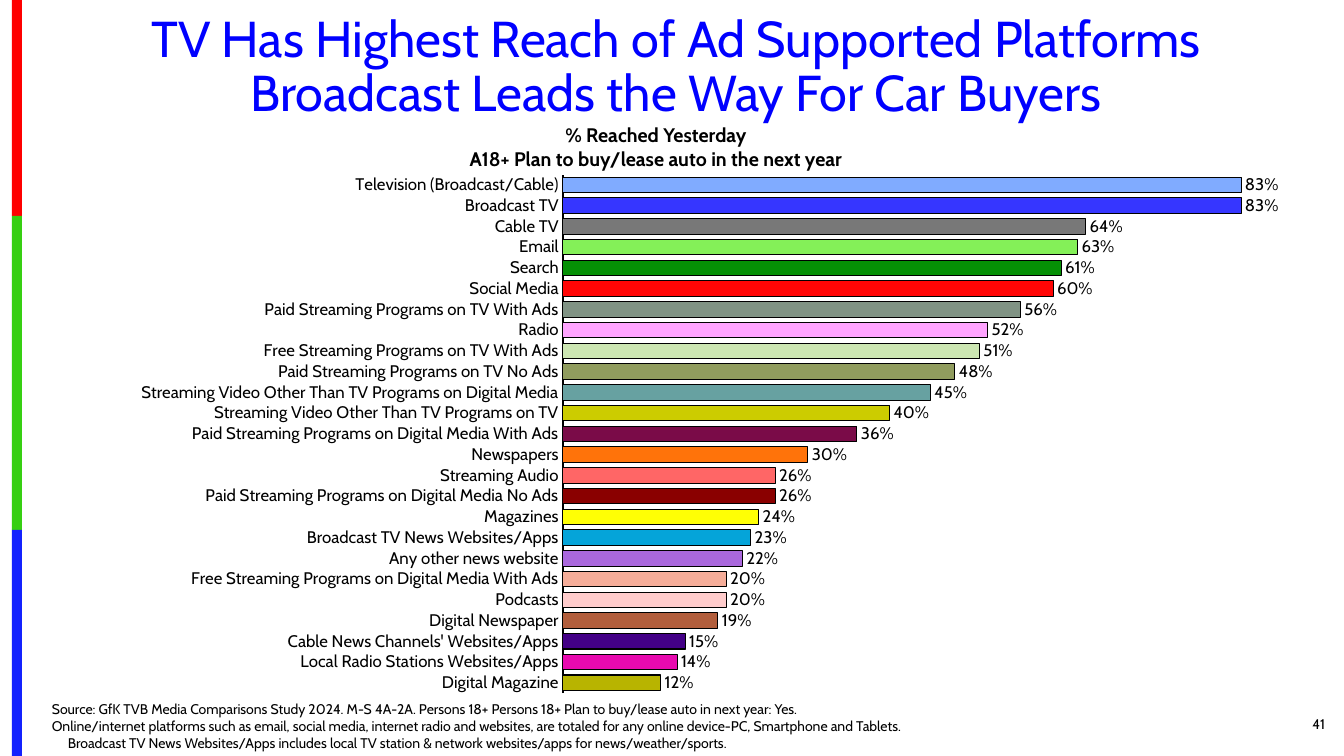
from dataclasses import dataclass

from lxml import etree
from pptx import Presentation
from pptx import util as u
from pptx.chart.data import CategoryChartData
from pptx.dml.color import RGBColor
from pptx.enum import chart as charts, shapes, text
from pptx.oxml import ns

EMU_PER_PX = 914400 / 100.8


@dataclass(frozen=True)
class Theme:
    font: str = "Cabin"
    ink: str = "000000"
    title_blue: str = "0000FF"
    title_size: int = 36
    subtitle_size: int = 14
    label_size: int = 12
    note_size: int = 10
    stripe_colors: tuple = ("FE0000", "36CF12", "1322FE")


THEME = Theme()
STRIPE_EDGES = (0, 216, 530, 756)
PLATFORMS = [
    ("Television (Broadcast/Cable)", 0.83, "80ABFF"),
    ("Broadcast TV", 0.83, "3636FF"),
    ("Cable TV", 0.64, "787878"),
    ("Email", 0.63, "84F058"),
    ("Search", 0.61, "059005"),
    ("Social Media", 0.60, "FF0505"),
    ("Paid Streaming Programs on TV With Ads", 0.56, "809384"),
    ("Radio", 0.52, "FFA4FF"),
    ("Free Streaming Programs on TV With Ads", 0.51, "CCE6B2"),
    ("Paid Streaming Programs on TV No Ads", 0.48, "909C5E"),
    ("Streaming Video Other Than TV Programs on Digital Media", 0.45, "67A1A1"),
    ("Streaming Video Other Than TV Programs on TV", 0.40, "CCCC00"),
    ("Paid Streaming Programs on Digital Media With Ads", 0.36, "7A0B48"),
    ("Newspapers", 0.30, "FF730A"),
    ("Streaming Audio", 0.26, "FF6666"),
    ("Paid Streaming Programs on Digital Media No Ads", 0.26, "8A0000"),
    ("Magazines", 0.24, "FFFF05"),
    ("Broadcast TV News Websites/Apps", 0.23, "05A4D9"),
    ("Any other news website", 0.22, "AA68DD"),
    ("Free Streaming Programs on Digital Media With Ads", 0.20, "F5AD99"),
    ("Podcasts", 0.20, "FFCCCC"),
    ("Digital Newspaper", 0.19, "B25E3C"),
    ("Cable News Channels' Websites/Apps", 0.15, "430086"),
    ("Local Radio Stations Websites/Apps", 0.14, "E80AAF"),
    ("Digital Magazine", 0.12, "B8B400"),
]
SOURCE_NOTES = [
    "Source: GfK TVB Media Comparisons Study 2024. M-S 4A-2A. Persons 18+ Persons 18+ Plan to buy/lease auto in next year: Yes.",
    "Online/internet platforms such as email, social media, internet radio and websites, are totaled for any online device-PC, Smartphone and Tablets.",
    "Broadcast TV News Websites/Apps includes local TV station & network websites/apps for news/weather/sports.",
]


def px(length):
    return u.Emu(round(length * EMU_PER_PX))


def style_font(font, size, color=THEME.ink, bold=False):
    font.name = THEME.font
    font.size = u.Pt(size)
    font.bold = bold
    font.color.rgb = RGBColor.from_string(color)


def add_text(slide, lines, box, size, color=THEME.ink, bold=False, align="LEFT",
             anchor="TOP", line_spacing=None, indents=None):
    frame = slide.shapes.add_textbox(*map(px, box)).text_frame
    frame.word_wrap = True
    frame.vertical_anchor = text.MSO_ANCHOR[anchor]
    for index, line in enumerate(lines):
        paragraph = frame.add_paragraph() if index else frame.paragraphs[0]
        if indents and indents[index]:
            paragraph._p.get_or_add_pPr().set("marL", str(px(indents[index])))
        paragraph.alignment = text.PP_ALIGN[align]
        paragraph.line_spacing = line_spacing
        run = paragraph.add_run()
        run.text = line
        style_font(run.font, size, color, bold)


def add_stripe(slide, top, bottom, color):
    stripe = slide.shapes.add_shape(
        shapes.MSO_SHAPE.RECTANGLE, px(12), px(top), px(10), px(bottom - top))
    stripe.shadow.inherit = False
    stripe.fill.solid()
    stripe.fill.fore_color.rgb = RGBColor.from_string(color)
    stripe.line.fill.background()


def place_plot(chart, x, y, w, h):
    area = chart._chartSpace.chart.plotArea
    for old_layout in area.findall(ns.qn("c:layout")):
        area.remove(old_layout)
    layout = etree.Element(ns.qn("c:layout"))
    manual = etree.SubElement(layout, ns.qn("c:manualLayout"))
    settings = dict(layoutTarget="inner", xMode="edge", yMode="edge", x=x, y=y, w=w, h=h)
    for name, value in settings.items():
        etree.SubElement(manual, ns.qn(f"c:{name}")).set("val", str(value))
    area.insert(0, layout)


def style_line(line, width):
    line.color.rgb = RGBColor.from_string(THEME.ink)
    line.width = u.Pt(width)


def add_reach_chart(slide, box):
    names, values, colors = zip(*PLATFORMS)
    data = CategoryChartData(number_format="0%")
    data.categories = names
    data.add_series("Series 1", values)
    chart = slide.shapes.add_chart(
        charts.XL_CHART_TYPE.BAR_CLUSTERED, *map(px, box), data).chart
    chart.has_title = False
    chart.has_legend = False
    style_font(chart.font, THEME.note_size)
    place_plot(chart, 0.413, 0.029, 0.565, 0.964)

    category_axis = chart.category_axis
    category_axis.reverse_order = True
    category_axis.has_major_gridlines = False
    category_axis.major_tick_mark = charts.XL_TICK_MARK.NONE
    category_axis.minor_tick_mark = charts.XL_TICK_MARK.NONE
    style_font(category_axis.tick_labels.font, THEME.label_size)
    style_line(category_axis.format.line, 1.5)

    value_axis = chart.value_axis
    value_axis.minimum_scale = 0
    value_axis.maximum_scale = 0.9
    value_axis.has_major_gridlines = False
    value_axis.visible = False

    plot = chart.plots[0]
    plot.gap_width = 34
    plot.vary_by_categories = False
    plot.has_data_labels = True
    labels = plot.data_labels
    labels.show_value = True
    labels.number_format = "0%"
    labels.number_format_is_linked = False
    labels.position = charts.XL_LABEL_POSITION.OUTSIDE_END
    style_font(labels.font, THEME.label_size)

    for index, color in enumerate(colors):
        bar = plot.series[0].points[index].format
        bar.fill.solid()
        bar.fill.fore_color.rgb = RGBColor.from_string(color)
        style_line(bar.line, 0.75)


def main():
    presentation = Presentation()
    presentation.slide_width = px(1344)
    presentation.slide_height = px(756)
    slide = presentation.slides.add_slide(presentation.slide_layouts[6])

    for top, bottom, color in zip(STRIPE_EDGES, STRIPE_EDGES[1:], THEME.stripe_colors):
        add_stripe(slide, top, bottom, color)
    add_text(slide, ["41"], (1289, 704, 46, 40), THEME.note_size,
             align="RIGHT", anchor="MIDDLE")
    add_text(slide,
             ["TV Has Highest Reach of Ad Supported Platforms Broadcast Leads the Way For Car Buyers"],
             (50, 8, 1252, 120), THEME.title_size, color=THEME.title_blue,
             align="CENTER", anchor="MIDDLE", line_spacing=0.9)
    add_text(slide, ["% Reached Yesterday", "A18+ Plan to buy/lease auto in the next year"],
             (320, 118, 672, 57), THEME.subtitle_size, bold=True, align="CENTER")
    add_reach_chart(slide, (25, 159, 1302, 538))
    add_text(slide, SOURCE_NOTES, (42, 695, 923, 61), THEME.note_size,
             anchor="BOTTOM", indents=(0, 0, 16))
    presentation.save("out.pptx")


if __name__ == "__main__":
    main()
